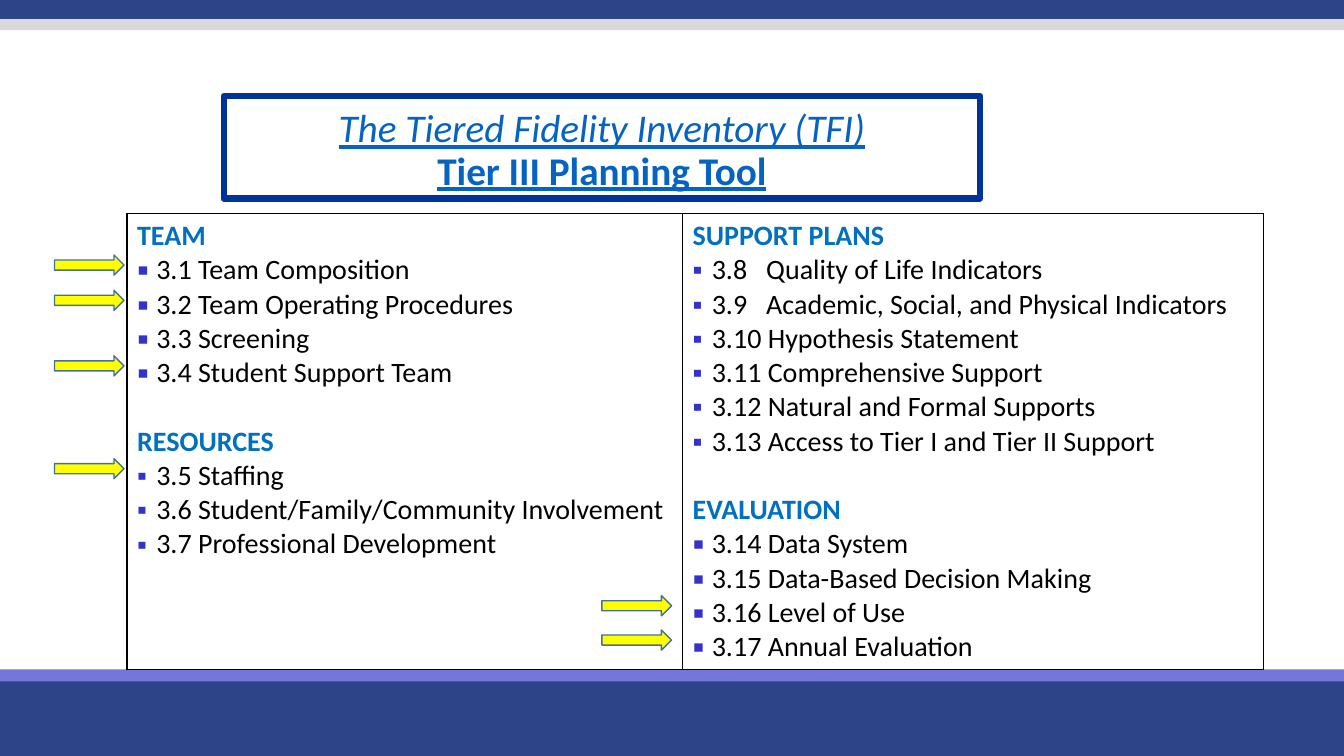
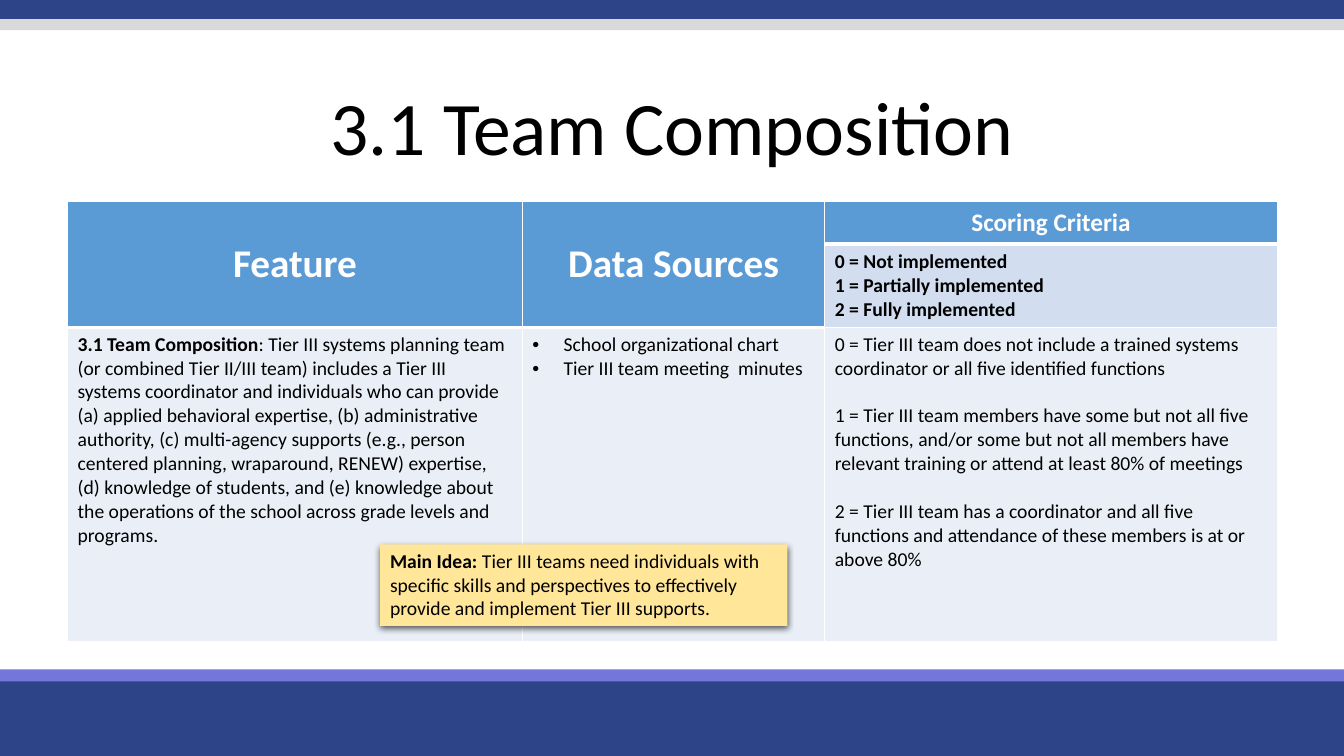
from dataclasses import dataclass

from lxml import etree
from pptx import Presentation
from pptx.dml.color import RGBColor
from pptx.enum.shapes import MSO_SHAPE
from pptx.enum.text import MSO_ANCHOR, PP_ALIGN
from pptx.oxml import parse_xml
from pptx.oxml.ns import nsdecls, qn
from pptx.util import Inches, Pt

FONT = "Calibri"
BLACK, WHITE, NAVY = "000000", "FFFFFF", "2E4488"
HEADING_BLUE, LINK_BLUE, FRAME_BLUE = "0070C0", "0563C1", "003399"
YELLOW, ARROW_LINE, NOTE_YELLOW = "FFFF00", "42719B", "FFE699"
HEADER_FILL, SCALE_FILL, BODY_FILL = "5B9BD5", "D2DEEF", "EAEFF7"
LINE_HEIGHT = 1.22


@dataclass
class Line:
    """One paragraph: an optional bold lead, then plain text."""
    text: str = ""
    lead: str = ""
    size: float = 14
    color: str = BLACK
    align: PP_ALIGN = PP_ALIGN.LEFT
    bullet: tuple = ()
    gap: bool = False
    tab: float = 0


BANDS = [
    (-0.03, 0.22, NAVY),
    (0.19, 0.11, "D9D9D9"),
    (6.7, 0.8, NAVY),
    (6.64, 0.12, "7476DA"),
]

INVENTORY_TITLE = ("The Tiered Fidelity Inventory (TFI)", "Tier III Planning Tool")
INVENTORY = [
    [
        ("TEAM", 120, ["3.1 Team Composition", "3.2 Team Operating Procedures",
                       "3.3 Screening", "3.4 Student Support Team"]),
        ("RESOURCES", 100, ["3.5 Staffing", "3.6 Student/Family/Community Involvement",
                            "3.7 Professional Development"]),
    ],
    [
        ("SUPPORT PLANS", 100, ["3.8\tQuality of Life Indicators",
                                "3.9\tAcademic, Social, and Physical Indicators",
                                "3.10 Hypothesis Statement", "3.11 Comprehensive Support",
                                "3.12 Natural and Formal Supports",
                                "3.13 Access to Tier I and Tier II Support"]),
        ("EVALUATION", 120, ["3.14 Data System", "3.15 Data-Based Decision Making",
                             "3.16 Level of Use", "3.17 Annual Evaluation"]),
    ],
]
ARROWS = {0.54: (2.53, 2.88, 3.53, 4.55), 5.97: (5.91, 6.25)}

FEATURE_TITLE = "3.1 Team Composition"
HEADERS = [("Feature", 28), ("Data Sources", 28), ("Scoring Criteria", 18)]
SCALE = ["0 = Not implemented", "1 = Partially implemented", "2 = Fully implemented"]
FEATURE = (
    ": Tier III systems planning team (or combined Tier II/III team) includes a Tier III "
    "systems coordinator and individuals who can provide (a) applied behavioral expertise, "
    "(b) administrative authority, (c) multi-agency supports (e.g., person centered planning, "
    "wraparound, RENEW) expertise, (d) knowledge of students, and (e) knowledge about the "
    "operations of the school across grade levels and programs."
)
SOURCES = ["School organizational chart", "Tier III team meeting  minutes"]
CRITERIA = [
    "0 = Tier III team does not include a trained systems coordinator or all five "
    "identified functions",
    "1 = Tier III team members have some but not all five functions, and/or some but not all "
    "members have relevant training or attend at least 80% of meetings",
    "2 = Tier III team has a coordinator and all five functions and attendance of these "
    "members is at or above 80%",
]
MAIN_IDEA = (
    "Tier III teams need individuals with specific skills and perspectives to effectively "
    "provide and implement Tier III supports."
)


def rgb(value):
    return RGBColor.from_string(value)


def add_box(slide, kind, left, top, width, height, fill, line=None, weight=1):
    shape = slide.shapes.add_shape(kind, Inches(left), Inches(top), Inches(width), Inches(height))
    shape.shadow.inherit = False
    shape.fill.solid()
    shape.fill.fore_color.rgb = rgb(fill)
    if line:
        shape.line.color.rgb = rgb(line)
        shape.line.width = Pt(weight)
    else:
        shape.line.fill.background()
    return shape


def style_run(run, size, color, bold=False, italic=False, underline=False):
    font = run.font
    font.name, font.size, font.bold = FONT, Pt(size), bold
    font.italic, font.underline = italic, underline
    font.color.rgb = rgb(color)


def add_bullet(paragraph, character, indent, color, percent):
    properties = paragraph._p.get_or_add_pPr()
    properties.set("marL", str(Inches(indent)))
    properties.set("indent", str(-Inches(indent)))
    bullet_color = etree.SubElement(properties, qn("a:buClr"))
    etree.SubElement(bullet_color, qn("a:srgbClr"), val=color)
    etree.SubElement(properties, qn("a:buSzPct"), val=str(percent * 1000))
    etree.SubElement(properties, qn("a:buFont"), typeface="Arial")
    etree.SubElement(properties, qn("a:buChar"), char=character)


def add_tab(paragraph, position):
    tabs = etree.SubElement(paragraph._p.get_or_add_pPr(), qn("a:tabLst"))
    etree.SubElement(tabs, qn("a:tab"), pos=str(Inches(position)), algn="l")


def write_lines(frame, lines):
    frame.word_wrap = True
    for index, line in enumerate(lines):
        paragraph = frame.add_paragraph() if index else frame.paragraphs[0]
        if line.bullet:
            add_bullet(paragraph, *line.bullet)
        if line.tab:
            add_tab(paragraph, line.tab)
        paragraph.alignment = line.align
        if line.gap:
            paragraph.space_before = Pt(round(line.size * LINE_HEIGHT, 1))
        for text, bold in ((line.lead, True), (line.text, False)):
            if text:
                run = paragraph.add_run()
                run.text = text
                style_run(run, line.size, line.color, bold)


def add_grid(slide, left, top, widths, heights):
    table = slide.shapes.add_table(
        len(heights), len(widths), Inches(left), Inches(top),
        Inches(sum(widths)), Inches(sum(heights))).table
    table.first_row = table.horz_banding = False
    for column, width in zip(table.columns, widths):
        column.width = Inches(width)
    for row, height in zip(table.rows, heights):
        row.height = Inches(height)
    return table


def style_cell(cell, fill, border, top=1, bottom=1):
    cell.fill.solid()
    cell.fill.fore_color.rgb = rgb(fill)
    properties = cell._tc.get_or_add_tcPr()
    for index, (side, weight) in enumerate(zip("LRTB", (1, 1, top, bottom))):
        properties.insert(index, parse_xml(
            f'<a:ln{side} {nsdecls("a")} w="{Pt(weight)}"><a:solidFill>'
            f'<a:srgbClr val="{border}"/></a:solidFill></a:ln{side}>'))


def add_shadow(shape):
    effects = shape._element.spPr.find(qn("a:effectLst"))
    effects.append(parse_xml(
        f'<a:outerShdw {nsdecls("a")} blurRad="{Pt(4.5)}" dist="{Pt(1.5)}" dir="5400000" '
        'algn="t" rotWithShape="0"><a:srgbClr val="000000"><a:alpha val="63000"/>'
        '</a:srgbClr></a:outerShdw>'))


def new_slide(presentation):
    slide = presentation.slides.add_slide(presentation.slide_layouts[6])
    for top, height, fill in BANDS:
        add_box(slide, MSO_SHAPE.RECTANGLE, 0, top, 13.33, height, fill)
    return slide


def inventory_lines(sections):
    lines = []
    for heading, percent, items in sections:
        lines.append(Line(lead=heading, size=20, color=HEADING_BLUE, gap=bool(lines)))
        lines += [Line(item, size=20, bullet=("▪", 0.19, "3333CC", percent),
                       tab=0.73 if "\t" in item else 0) for item in items]
    return lines


def build_inventory(presentation):
    slide = new_slide(presentation)
    table = add_grid(slide, 1.26, 2.12, [5.51, 5.76], [4.49])
    for cell, sections in zip(table.rows[0].cells, INVENTORY):
        style_cell(cell, WHITE, BLACK)
        write_lines(cell.text_frame, inventory_lines(sections))
    for left, tops in ARROWS.items():
        for top in tops:
            add_box(slide, MSO_SHAPE.RIGHT_ARROW, left, top, 0.69, 0.2, YELLOW, ARROW_LINE)
    title = add_box(slide, MSO_SHAPE.RECTANGLE, 2.22, 0.95, 7.5, 1.02, WHITE, FRAME_BLUE, 4.5)
    title.text_frame.vertical_anchor = MSO_ANCHOR.BOTTOM
    paragraph = title.text_frame.paragraphs[0]
    paragraph.text = "\v".join(INVENTORY_TITLE)
    paragraph.alignment = PP_ALIGN.CENTER
    paragraph.line_spacing = 0.9
    name, tool = paragraph.runs
    style_run(name, 28, LINK_BLUE, italic=True, underline=True)
    style_run(tool, 28, LINK_BLUE, bold=True, underline=True)


def build_feature(presentation):
    slide = new_slide(presentation)
    title = slide.shapes.add_textbox(Inches(0), Inches(0.69), Inches(13.33), Inches(1.21))
    title.text_frame.vertical_anchor = MSO_ANCHOR.MIDDLE
    write_lines(title.text_frame, [Line(FEATURE_TITLE, size=54, align=PP_ALIGN.CENTER)])
    title.text_frame.paragraphs[0].line_spacing = 0.9

    table = add_grid(slide, 0.67, 2, [4.51, 3, 4.49], [0.42, 0.83, 3.12])
    for column, (header, size) in enumerate(HEADERS):
        spanning = column < 2
        style_cell(table.cell(0, column), HEADER_FILL, WHITE, bottom=3)
        style_cell(table.cell(1, column), HEADER_FILL if spanning else SCALE_FILL, WHITE,
                   top=3, bottom=3 if spanning else 1)
        style_cell(table.cell(2, column), BODY_FILL, WHITE, top=3 if spanning else 1)
        if spanning:
            table.cell(0, column).merge(table.cell(1, column))
        table.cell(0, column).vertical_anchor = MSO_ANCHOR.MIDDLE
        write_lines(table.cell(0, column).text_frame,
                    [Line(lead=header, size=size, color=WHITE, align=PP_ALIGN.CENTER)])
    table.cell(1, 2).vertical_anchor = MSO_ANCHOR.MIDDLE
    write_lines(table.cell(1, 2).text_frame, [Line(lead=score) for score in SCALE])
    body = [
        [Line(FEATURE, lead=FEATURE_TITLE)],
        [Line(source, bullet=("•", 0.31, BLACK, 100)) for source in SOURCES],
        [Line(text, gap=index > 0) for index, text in enumerate(CRITERIA)],
    ]
    for cell, lines in zip(table.rows[2].cells, body):
        write_lines(cell.text_frame, lines)

    note = add_box(slide, MSO_SHAPE.RECTANGLE, 3.77, 5.4, 4.04, 0.81, NOTE_YELLOW)
    add_shadow(note)
    note.text_frame.vertical_anchor = MSO_ANCHOR.TOP
    write_lines(note.text_frame, [Line(MAIN_IDEA, lead="Main Idea: ")])


def main():
    """Build the two fidelity inventory slides."""
    presentation = Presentation()
    presentation.slide_width = Inches(13.33)
    presentation.slide_height = Inches(7.5)
    build_inventory(presentation)
    build_feature(presentation)
    presentation.save("out.pptx")


if __name__ == "__main__":
    main()
